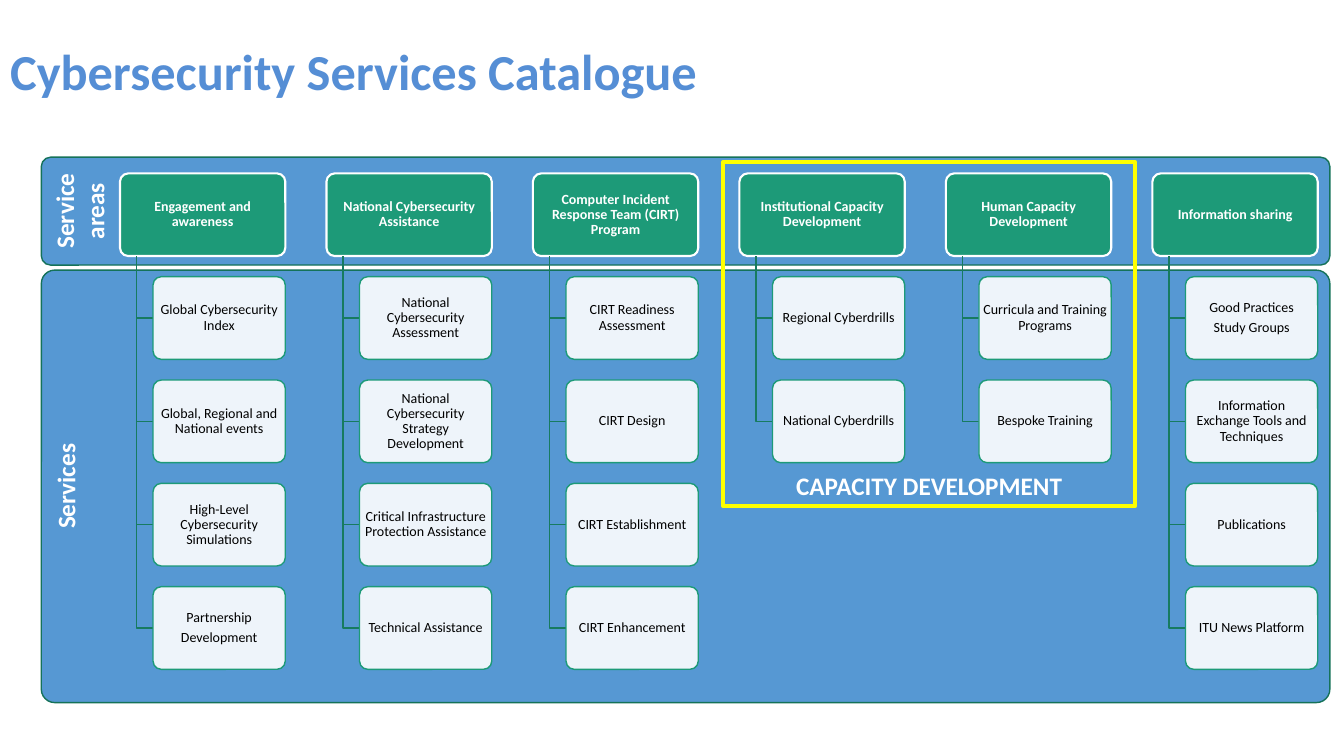
import lxml.etree
import pptx
import pptx.dml.color
import pptx.enum.shapes
import pptx.enum.text
import pptx.oxml.ns
import pptx.util

Inches = pptx.util.Inches
Pt = pptx.util.Pt
RGBColor = pptx.dml.color.RGBColor
SHAPE = pptx.enum.shapes.MSO_SHAPE
ANCHOR = pptx.enum.text.MSO_ANCHOR
ALIGN = pptx.enum.text.PP_ALIGN

WHITE = RGBColor(0xFF, 0xFF, 0xFF)
BLACK = RGBColor(0x00, 0x00, 0x00)
TITLE_BLUE = RGBColor(0x55, 0x8E, 0xD5)
BAND_BLUE = RGBColor(0x56, 0x98, 0xD3)
BAND_EDGE = RGBColor(0x15, 0x72, 0x59)
GREEN = RGBColor(0x1D, 0x9A, 0x78)
BRANCH_GREEN = RGBColor(0x17, 0x7B, 0x60)
YELLOW = RGBColor(0xFF, 0xFF, 0x00)

TITLE_FONT = {"name": "Calibri", "size": Pt(36), "bold": True, "color": TITLE_BLUE}
LABEL_FONT = {"name": "Calibri", "size": Pt(18), "bold": True, "color": WHITE}
AREA_FONT = {"name": "Calibri", "size": Pt(10), "bold": True, "color": WHITE}
SERVICE_FONT = {"name": "Calibri", "size": Pt(10), "bold": False, "color": BLACK}
CARD_MARGINS = {"margin_left": Inches(0.02), "margin_right": Inches(0.02),
                "margin_top": Inches(0.01), "margin_bottom": Inches(0.01)}

BANDS = [
    ("Service areas", (0.41, 1.56, 12.78, 1.07), 0.085),
    ("Services", (0.41, 2.68, 12.78, 4.29), 0.031),
]
CATALOGUE = [
    ("Engagement and awareness",
     ["Global Cybersecurity Index", "Global, Regional and National events",
      "High-Level Cybersecurity Simulations", "Partnership\nDevelopment"]),
    ("National Cybersecurity Assistance",
     ["National Cybersecurity Assessment",
      "National Cybersecurity Strategy Development",
      "Critical Infrastructure Protection Assistance", "Technical Assistance"]),
    ("Computer Incident Response Team (CIRT) Program",
     ["CIRT Readiness Assessment", "CIRT Design", "CIRT Establishment",
      "CIRT Enhancement"]),
    ("Institutional Capacity Development",
     ["Regional Cyberdrills", "National Cyberdrills"]),
    ("Human Capacity Development",
     ["Curricula and Training Programs", "Bespoke Training"]),
    ("Information sharing",
     ["Good Practices\nStudy Groups",
      "Information Exchange Tools and Techniques", "Publications",
      "ITU News Platform"]),
]


def write_text(s, text, font, align, anchor, spacing=1.0, margins=None):
    """Fill a shape with one paragraph per line of text."""
    tf = s.text_frame
    for name, value in {"word_wrap": True, "vertical_anchor": anchor, **(margins or {})}.items():
        setattr(tf, name, value)
    for i, line in enumerate(text.split("\n")):
        p = tf.paragraphs[0] if i == 0 else tf.add_paragraph()
        p.alignment = align
        p.line_spacing = spacing
        p.space_before = Pt(3.5 if i else 0)
        r = p.add_run()
        r.text = line
        for name, value in font.items():
            if name == "color":
                r.font.color.rgb = value
            else:
                setattr(r.font, name, value)


def add_box(slide, kind, box, fill, line, width, corner=None):
    """Add a preset shape at a box given in inches."""
    s = slide.shapes.add_shape(kind, *map(Inches, box))
    s.shadow.inherit = False
    if fill is None:
        s.fill.background()
    else:
        s.fill.solid()
        s.fill.fore_color.rgb = fill
    s.line.color.rgb = line
    s.line.width = Pt(width)
    if corner is not None:
        s.adjustments[0] = corner
    return s


def add_title(slide, box):
    """Place the slide title in its placeholder."""
    s = slide.shapes.title
    s.left, s.top, s.width, s.height = map(Inches, box)
    write_text(s, "Cybersecurity Services Catalogue", TITLE_FONT, ALIGN.LEFT, ANCHOR.MIDDLE, 0.9)


def add_band(slide, label, box, corner):
    """Add a background band with its label turned to read upwards."""
    s = add_box(slide, SHAPE.ROUNDED_RECTANGLE, box, BAND_BLUE, BAND_EDGE, 1, corner)
    write_text(s, label, LABEL_FONT, ALIGN.CENTER, ANCHOR.TOP)
    s.element.txBody.bodyPr.set("vert", "vert270")


def add_card(slide, text, box, fill, line, width, font):
    """Add a rounded card with centred text."""
    s = add_box(slide, SHAPE.ROUNDED_RECTANGLE, box, fill, line, width, 0.1)
    write_text(s, text, font, ALIGN.CENTER, ANCHOR.MIDDLE, 0.9, CARD_MARGINS)
    return s


def add_branch(slide, x, top, right, bottom):
    """Draw an elbow from a service area down to a service."""
    builder = slide.shapes.build_freeform(Inches(x), Inches(top))
    builder.add_line_segments(
        [(Inches(x), Inches(bottom)), (Inches(right), Inches(bottom))], close=False)
    s = builder.convert_to_shape()
    s.shadow.inherit = False
    s.fill.background()
    s.line.color.rgb = BRANCH_GREEN
    s.line.width = Pt(1)


def add_area(slide, area, services, box):
    """Add a service area heading with its services hanging below it."""
    left, top, width, height = box
    add_card(slide, area, box, GREEN, WHITE, 1.5, AREA_FONT)
    indent = width / 5
    for row, service in enumerate(services, 1):
        y = top + row * height * 1.25
        add_branch(slide, left + indent / 2, top + height, left + indent, y + height / 2)
        s = add_card(slide, service, (left + indent, y, width - indent, height),
                     WHITE, GREEN, 1, SERVICE_FONT)
        color = s.element.spPr.xpath("./a:solidFill/a:srgbClr")[0]
        lxml.etree.SubElement(color, pptx.oxml.ns.qn("a:alpha"), val="90000")


def add_catalogue(slide, box):
    """Spread the service areas evenly across a box."""
    left, top, width, height = box
    card_width = 2 * height
    pitch = (width - card_width) / (len(CATALOGUE) - 1)
    for i, (area, services) in enumerate(CATALOGUE):
        add_area(slide, area, services, (left + i * pitch, top, card_width, height))


def add_highlight(slide, box):
    """Frame the capacity development areas and name them."""
    s = add_box(slide, SHAPE.RECTANGLE, box, None, YELLOW, 3)
    write_text(s, "CAPACITY DEVELOPMENT", LABEL_FONT, ALIGN.CENTER, ANCHOR.BOTTOM)


def main():
    """Build and save the slide."""
    prs = pptx.Presentation()
    prs.slide_width, prs.slide_height = Inches(13.33), Inches(7.5)
    slide = prs.slides.add_slide(prs.slide_layouts[5])
    add_title(slide, (0, 0.01, 11.5, 1.45))
    for label, box, corner in BANDS:
        add_band(slide, label, box, corner)
    add_catalogue(slide, (1.19, 1.72, 11.88, 0.82))
    add_highlight(slide, (7.17, 1.61, 4.09, 3.41))
    prs.save("out.pptx")


if __name__ == "__main__":
    main()
